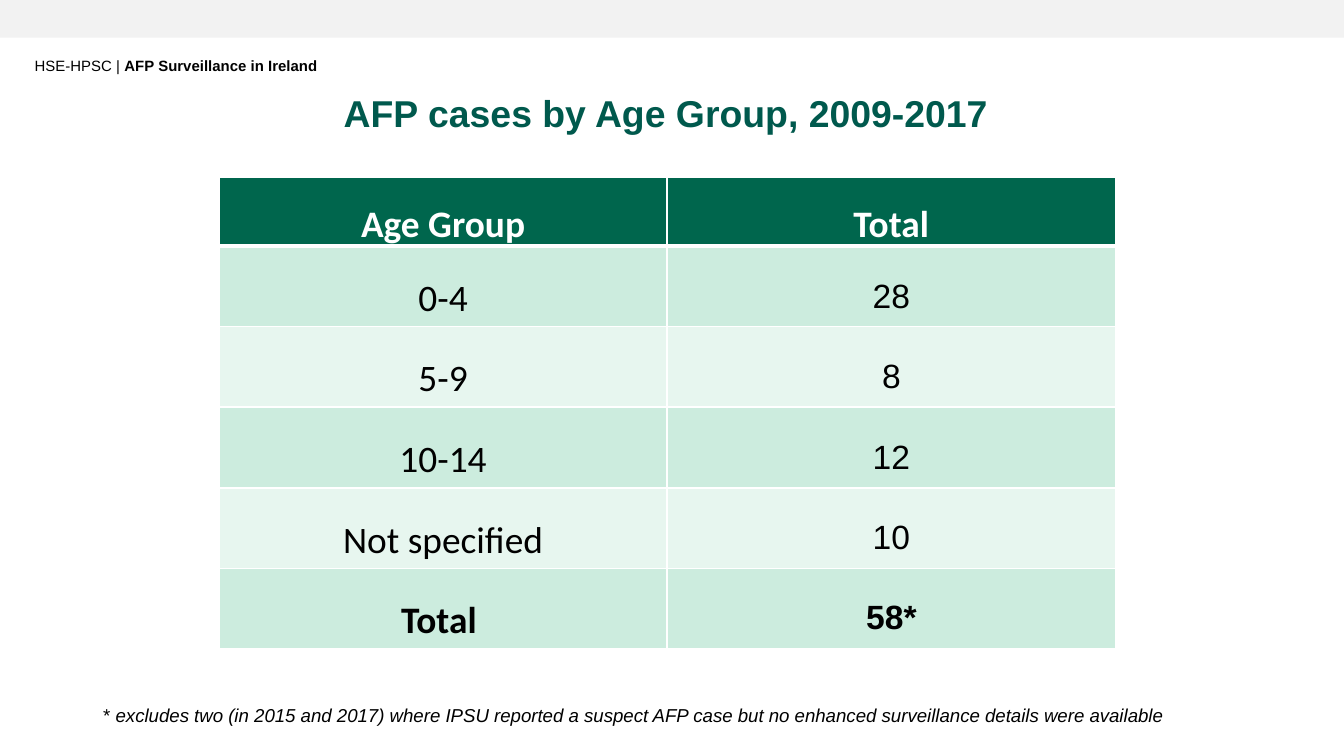
"""Builds the slide on AFP cases by age group."""
import pptx
import pptx.dml.color
import pptx.enum.shapes
import pptx.enum.text
import pptx.oxml
import pptx.oxml.ns
import pptx.util

Inches = pptx.util.Inches
CENTER = pptx.enum.text.PP_ALIGN.CENTER
LEFT = pptx.enum.text.PP_ALIGN.LEFT


def color(value):
    return pptx.dml.color.RGBColor.from_string(value)


class AgeGroupSlide:
    black, white, gray = "000000", "FFFFFF", "F2F2F2"
    title_green, header_green = "00594D", "00664D"
    bands = ("CCECDE", "E7F6EF")
    body_font, label_font = "Arial", "Calibri"

    def __init__(self, presentation):
        self.slide = presentation.slides.add_slide(presentation.slide_layouts[6])

    def add_run(self, paragraph, text, size, ink=black, font=body_font, bold=False, italic=False):
        run = paragraph.add_run()
        run.text = text
        run.font.size = pptx.util.Pt(size)
        run.font.name = font
        run.font.bold = bold
        run.font.italic = italic
        run.font.color.rgb = color(ink)

    def add_bar(self, left, top, width, height):
        shape = self.slide.shapes.add_shape(
            pptx.enum.shapes.MSO_SHAPE.RECTANGLE,
            Inches(left), Inches(top), Inches(width), Inches(height))
        shape.shadow.inherit = False
        shape.fill.solid()
        shape.fill.fore_color.rgb = color(self.gray)
        shape.line.fill.background()

    def add_text(self, left, top, width, height, runs, alignment=LEFT, wrap=True):
        box = self.slide.shapes.add_textbox(
            Inches(left), Inches(top), Inches(width), Inches(height))
        box.text_frame.word_wrap = wrap
        paragraph = box.text_frame.paragraphs[0]
        paragraph.alignment = alignment
        for text, style in runs:
            self.add_run(paragraph, text, **style)

    def add_borders(self, cell, top, bottom):
        properties = cell._tc.get_or_add_tcPr()
        namespace = pptx.oxml.ns.nsdecls("a")
        widths = {"lnL": 1, "lnR": 1, "lnT": top, "lnB": bottom}
        for position, (tag, width) in enumerate(widths.items()):
            properties.insert(position, pptx.oxml.parse_xml(
                f'<a:{tag} {namespace} w="{pptx.util.Pt(width)}"><a:solidFill>'
                f'<a:srgbClr val="{self.white}"/></a:solidFill></a:{tag}>'))

    def add_table(self, left, top, width, height, row_heights, rows):
        table = self.slide.shapes.add_table(
            len(rows), len(rows[0]),
            Inches(left), Inches(top), Inches(width), Inches(height)).table
        for row_index, values in enumerate(rows):
            header, last = row_index == 0, row_index == len(rows) - 1
            table.rows[row_index].height = Inches(row_heights[row_index])
            for column_index, text in enumerate(values):
                cell = table.cell(row_index, column_index)
                cell.vertical_anchor = pptx.enum.text.MSO_ANCHOR.MIDDLE
                if not last:
                    cell.margin_left = cell.margin_right = Inches(0.07)
                    cell.margin_top, cell.margin_bottom = Inches(0.01), 0
                cell.fill.solid()
                cell.fill.fore_color.rgb = color(
                    self.header_green if header else self.bands[(row_index - 1) % 2])
                self.add_borders(cell, 3 if row_index == 1 else 1, 3 if header else 1)
                paragraph = cell.text_frame.paragraphs[0]
                paragraph.alignment = CENTER
                paragraph.line_spacing = 1.5
                label = header or column_index == 0
                self.add_run(
                    paragraph, text, 20 if label else 18,
                    self.white if header else self.black,
                    self.label_font if label else self.body_font, header or last)


def main():
    presentation = pptx.Presentation()
    presentation.slide_width = Inches(10)
    presentation.slide_height = Inches(10) * 9 // 16
    page = AgeGroupSlide(presentation)
    page.add_bar(0, 0, 10, 0.28)
    page.add_text(0.16, 0.37, 2.33, 0.24, [
        ("HSE-HPSC | ", {"size": 8}),
        ("AFP Surveillance in Ireland", {"size": 8, "bold": True}),
    ], wrap=False)
    page.add_text(0.35, 0.62, 9.21, 0.44, [
        ("AFP cases by Age Group, 2009-2017",
         {"size": 20, "ink": page.title_green, "bold": True}),
    ], CENTER)
    page.add_table(1.63, 1.32, 6.67, 3.51, [0.24] + [0.6] * 4 + [0.48], [
        ("Age Group", "Total"),
        ("0-4", "28"),
        ("5-9", "8"),
        ("10-14", "12"),
        ("Not specified", "10"),
        ("Total ", "58*"),
    ])
    page.add_text(0.67, 5.19, 9.13, 0.27, [
        ("* ", {"size": 10}),
        ("excludes two (in 2015 and 2017) where IPSU reported a suspect AFP case "
         "but no enhanced surveillance details were available", {"size": 10, "italic": True}),
    ])
    presentation.save("out.pptx")


if __name__ == "__main__":
    main()
